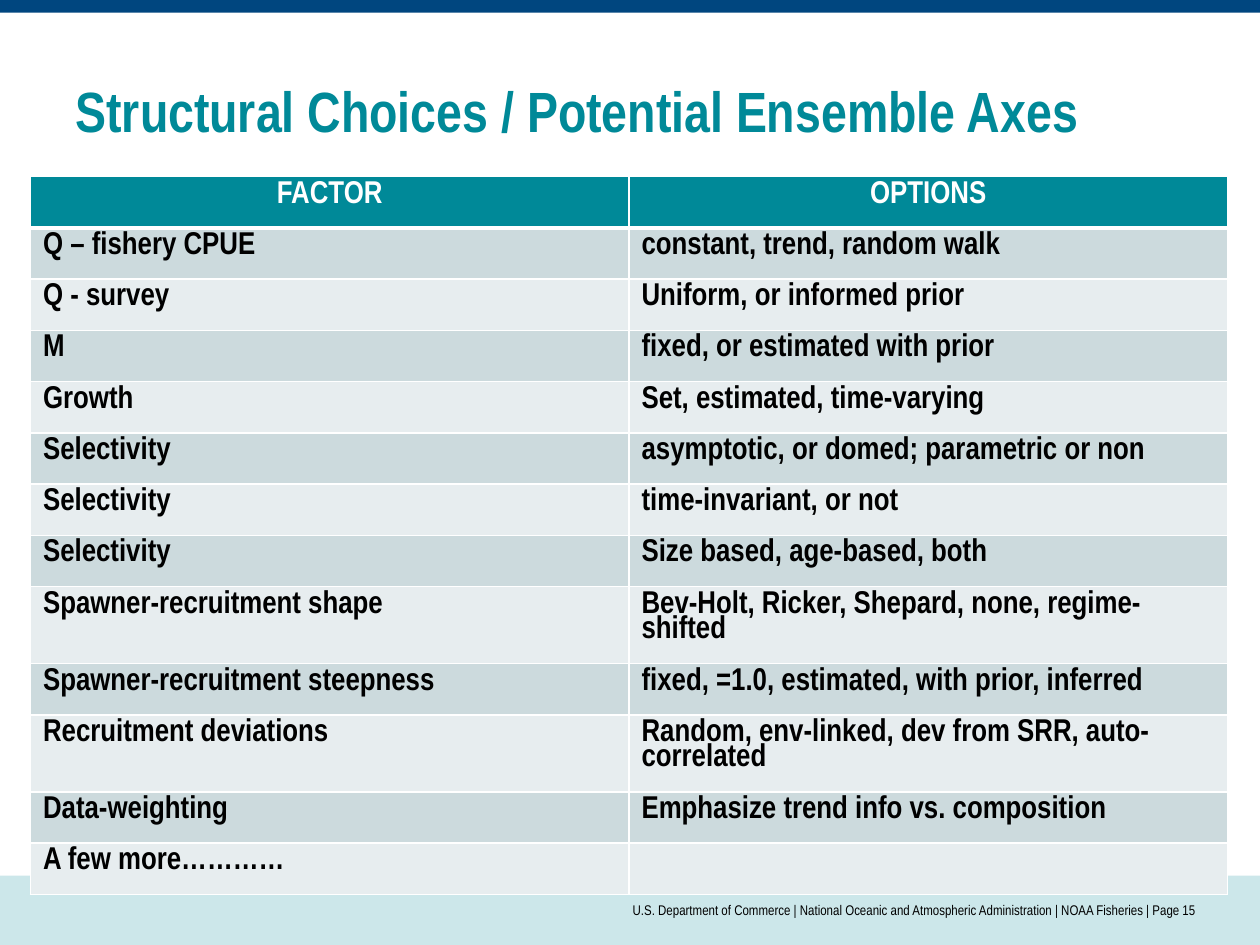
import lxml.etree
import pptx
import pptx.dml.color
import pptx.enum.shapes
import pptx.enum.text
import pptx.oxml.ns
import pptx.util

Pt = pptx.util.Pt
ALIGN = pptx.enum.text.PP_ALIGN
MIDDLE = pptx.enum.text.MSO_ANCHOR.MIDDLE
HUES = {"teal": "008998", "navy": "00467F", "pale": "CCE7EA", "dark": "CCDADD",
        "light": "E7EDEF", "white": "FFFFFF", "black": "000000"}
ROWS = [
    ("FACTOR", "OPTIONS"),
    ("Q – fishery CPUE", "constant, trend, random walk"),
    ("Q - survey", "Uniform, or informed prior"),
    ("M", "fixed, or estimated with prior"),
    ("Growth", "Set, estimated, time-varying"),
    ("Selectivity", "asymptotic, or domed; parametric or non"),
    ("Selectivity", "time-invariant, or not"),
    ("Selectivity", "Size based, age-based, both"),
    ("Spawner-recruitment shape", "Bev-Holt, Ricker, Shepard, none, regime-shifted"),
    ("Spawner-recruitment steepness", "fixed, =1.0, estimated, with prior, inferred"),
    ("Recruitment deviations", "Random, env-linked, dev from SRR, auto-correlated"),
    ("Data-weighting", "Emphasize trend info vs. composition"),
    ("A few more…………", ""),
]
FOOT = " | ".join(["U.S. Department of Commerce",
                   "National Oceanic and Atmospheric Administration",
                   "NOAA Fisheries", "Page 15"])


def tint(name):
    """Return the named colour."""
    return pptx.dml.color.RGBColor.from_string(HUES[name])


def write(frame, text, size=18, hue="black", bold=False, align=ALIGN.LEFT, gap=None):
    """Put formatted text into a text frame."""
    line = frame.paragraphs[0]
    line.alignment = align
    if gap:
        line.line_spacing = gap
    if text:
        line.add_run().text = text
    for font in [line.font] + [run.font for run in line.runs]:
        font.name, font.size, font.bold = "Arial Narrow", Pt(size), bold
        font.color.rgb = tint(hue)


def edge(cell, side, width):
    """Draw one white border of a table cell."""
    tag = pptx.oxml.ns.qn
    line = lxml.etree.SubElement(cell._tc.get_or_add_tcPr(), tag("a:ln" + side),
                                 w=str(Pt(width)))
    fill = lxml.etree.SubElement(line, tag("a:solidFill"))
    lxml.etree.SubElement(fill, tag("a:srgbClr"), val=HUES["white"])


class Deck:
    """Hold the style and the current slide."""

    def __init__(self):
        """Start a deck with one title-only slide."""
        self.file = pptx.Presentation()
        self.file.slide_width, self.file.slide_height = Pt(720), Pt(540)
        self.slide = self.file.slides.add_slide(self.file.slide_layouts[5])
        self.shapes = self.slide.shapes

    def band(self, top, height, hue):
        """Add a full-width colour band."""
        kind = pptx.enum.shapes.MSO_SHAPE.RECTANGLE
        band = self.shapes.add_shape(kind, 0, Pt(top), Pt(720), Pt(height))
        band.shadow.inherit = False
        band.fill.solid()
        band.fill.fore_color.rgb = tint(hue)
        band.line.fill.background()

    def title(self, text):
        """Place and fill the title."""
        box = self.shapes.title
        box.left, box.top, box.width, box.height = Pt(36), Pt(36), Pt(648), Pt(53.3)
        box.text_frame.vertical_anchor = MIDDLE
        write(box.text_frame, text, size=32.4, hue="teal", bold=True)

    def foot(self, text):
        """Add the footer line."""
        frame = self.shapes.add_textbox(Pt(180), Pt(500.4), Pt(504), Pt(39.6)).text_frame
        frame.word_wrap = True
        frame.margin_left = frame.margin_right = 0
        frame.vertical_anchor = MIDDLE
        write(frame, text, size=8, align=ALIGN.RIGHT)

    def table(self, rows):
        """Add the banded table with a header row."""
        high = 29.3
        grid = self.shapes.add_table(len(rows), 2, Pt(17.4), Pt(101), Pt(684),
                                     Pt(high * len(rows))).table
        for i, row in enumerate(rows):
            grid.rows[i].height = Pt(high)
            head = i == 0
            back = "teal" if head else ("light", "dark")[i % 2]
            for j, text in enumerate(row):
                cell = grid.cell(i, j)
                for side in "LRTB":
                    thick = (head and side == "B") or (i == 1 and side == "T")
                    edge(cell, side, 3 if thick else 1)
                cell.fill.solid()
                cell.fill.fore_color.rgb = tint(back)
                write(cell.text_frame, text, bold=True, gap=0.85,
                      hue="white" if head else "black",
                      align=ALIGN.CENTER if head else ALIGN.LEFT)


def main():
    """Build and save the slide."""
    deck = Deck()
    deck.band(500.4, 39.6, "pale")
    deck.band(0, 7.2, "navy")
    deck.title("Structural Choices / Potential Ensemble Axes")
    deck.foot(FOOT)
    deck.table(ROWS)
    deck.file.save("out.pptx")


if __name__ == "__main__":
    main()
